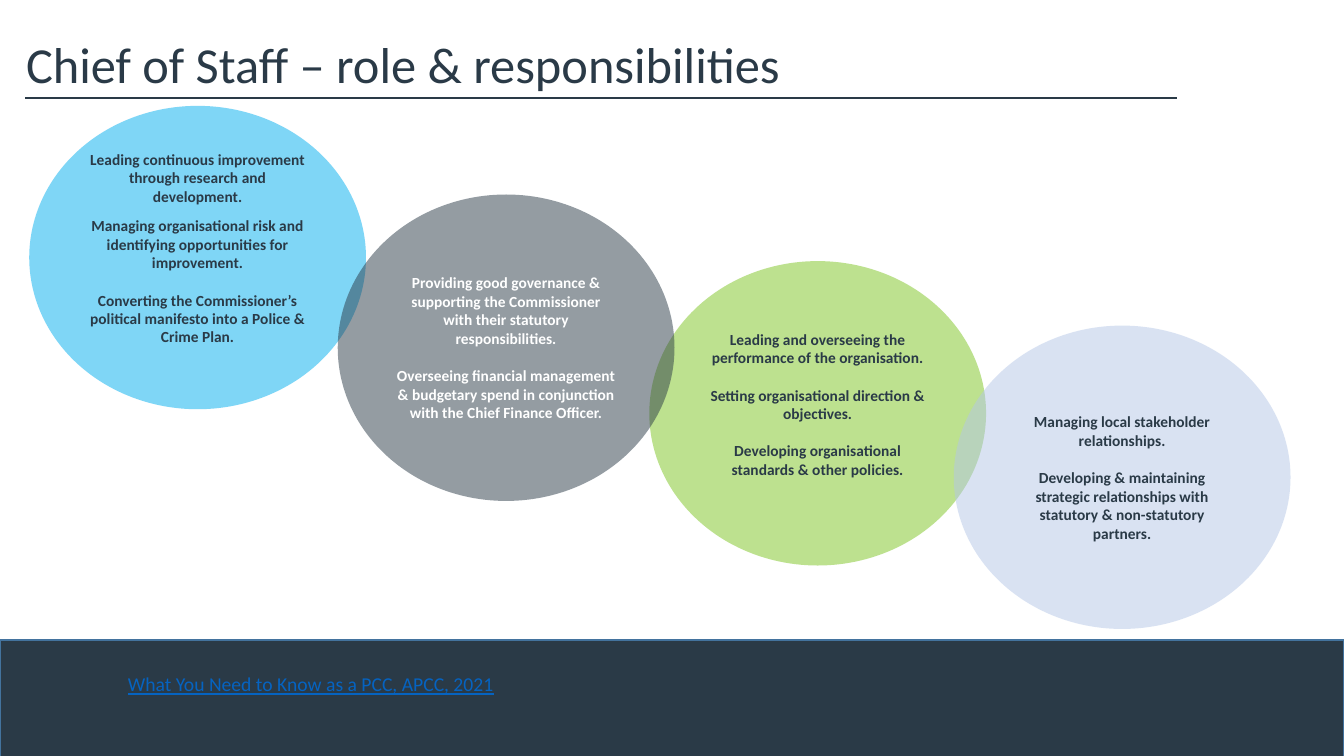
from dataclasses import dataclass

from lxml import etree
from pptx import Presentation
from pptx import util as u
from pptx.dml.color import RGBColor
from pptx.enum import shapes, text
from pptx.oxml.ns import qn


@dataclass(frozen=True)
class Theme:
    font: str = "Calibri"
    navy: str = "2A3A47"
    sky: str = "00AEEF"
    green: str = "7CC420"
    lavender: str = "B4C7E7"
    white: str = "FFFFFF"
    link: str = "0563C1"
    edge: str = "43739E"
    title_size: int = 36
    link_size: int = 14
    body_size: int = 11
    opacity: int = 50


theme = Theme()


def write(box, lines, size, color, frame_format, para_format, gaps=(), **font_format):
    for name, value in frame_format.items():
        setattr(box.text_frame, name, value)
    for index, line in enumerate(lines):
        para = box.text_frame.paragraphs[0] if index == 0 else box.text_frame.add_paragraph()
        for name, value in para_format.items():
            setattr(para, name, value)
        if index:
            para.space_before = u.Pt(gaps[index - 1])
        span = para.add_run()
        span.text = line
        span.font.color.rgb = RGBColor.from_string(color)
        for name, value in {"name": theme.font, "size": u.Pt(size), **font_format}.items():
            setattr(span.font, name, value)


def add_filled(kind, left, top, width, height, color):
    shape = page.shapes.add_shape(
        kind, u.Inches(left), u.Inches(top), u.Inches(width), u.Inches(height))
    shape.shadow.inherit = False
    shape.fill.solid()
    shape.fill.fore_color.rgb = RGBColor.from_string(color)
    return shape


deck = Presentation()
deck.slide_width = u.Inches(13.33)
deck.slide_height = u.Inches(7.5)
page = deck.slides.add_slide(deck.slide_layouts[6])

footer = add_filled(shapes.MSO_SHAPE.RECTANGLE, 0, 6.35, 13.33, 1.25, theme.navy)
footer.line.color.rgb = RGBColor.from_string(theme.edge)
footer.line.width = u.Pt(1)

title = page.shapes.add_textbox(u.Inches(0.16), u.Inches(0.28), u.Inches(12.64), u.Inches(0.77))
write(title, ["Chief of Staff – role & responsibilities"], theme.title_size, theme.navy,
      {"word_wrap": True, "vertical_anchor": text.MSO_ANCHOR.MIDDLE}, {"line_spacing": 0.9})

citation = page.shapes.add_textbox(u.Inches(1.17), u.Inches(6.62), u.Inches(3.86), u.Inches(0.34))
write(citation, ["What You Need to Know as a PCC, APCC, 2021"], theme.link_size, theme.link,
      {"word_wrap": False, "auto_size": text.MSO_AUTO_SIZE.SHAPE_TO_FIT_TEXT}, {}, underline=True)

circle_width = 3.34
line_gap = 13.4
roles = [
    (0.29, 1.05, 3.01, theme.sky, theme.navy, 0.24, (8, line_gap), [
        "Leading continuous improvement through research and development.",
        "Managing organisational risk and identifying opportunities for improvement.",
        "Converting the Commissioner’s political manifesto into a Police & Crime Plan."]),
    (6.44, 2.59, 3.02, theme.green, theme.navy, 0.23, (line_gap, line_gap), [
        "Leading and overseeing the performance of the organisation.",
        "Setting organisational direction & objectives.",
        "Developing organisational standards & other policies."]),
    (9.46, 3.23, 3.01, theme.lavender, theme.navy, 0.05, (line_gap,), [
        "Managing local stakeholder relationships.",
        "Developing & maintaining strategic relationships with statutory & non-statutory partners."]),
    (3.35, 1.93, 3.04, theme.navy, theme.white, 0.05, (line_gap,), [
        "Providing good governance & supporting the Commissioner with their statutory "
        "responsibilities.",
        "Overseeing financial management & budgetary spend in conjunction with the Chief "
        "Finance Officer."]),
]
for left, top, height, fill, color, bottom, gaps, lines in roles:
    circle = add_filled(shapes.MSO_SHAPE.OVAL, left, top, circle_width, height, fill)
    circle.line.fill.background()
    tint = circle.fill._xPr.find(qn("a:solidFill"))[0]
    etree.SubElement(tint, qn("a:alpha")).set("val", str(theme.opacity * 1000))
    write(circle, lines, theme.body_size, color,
          {"word_wrap": True, "vertical_anchor": text.MSO_ANCHOR.MIDDLE,
           "margin_bottom": u.Inches(bottom)},
          {"alignment": text.PP_ALIGN.CENTER}, gaps, bold=True)

rule = page.shapes.add_connector(
    shapes.MSO_CONNECTOR.STRAIGHT, u.Inches(0.25), u.Inches(0.97), u.Inches(11.67), u.Inches(0.97))
rule.line.color.rgb = RGBColor.from_string(theme.navy)
rule.line.width = u.Pt(1.5)
etree.SubElement(rule._element.spPr, qn("a:effectLst"))

deck.save("out.pptx")
